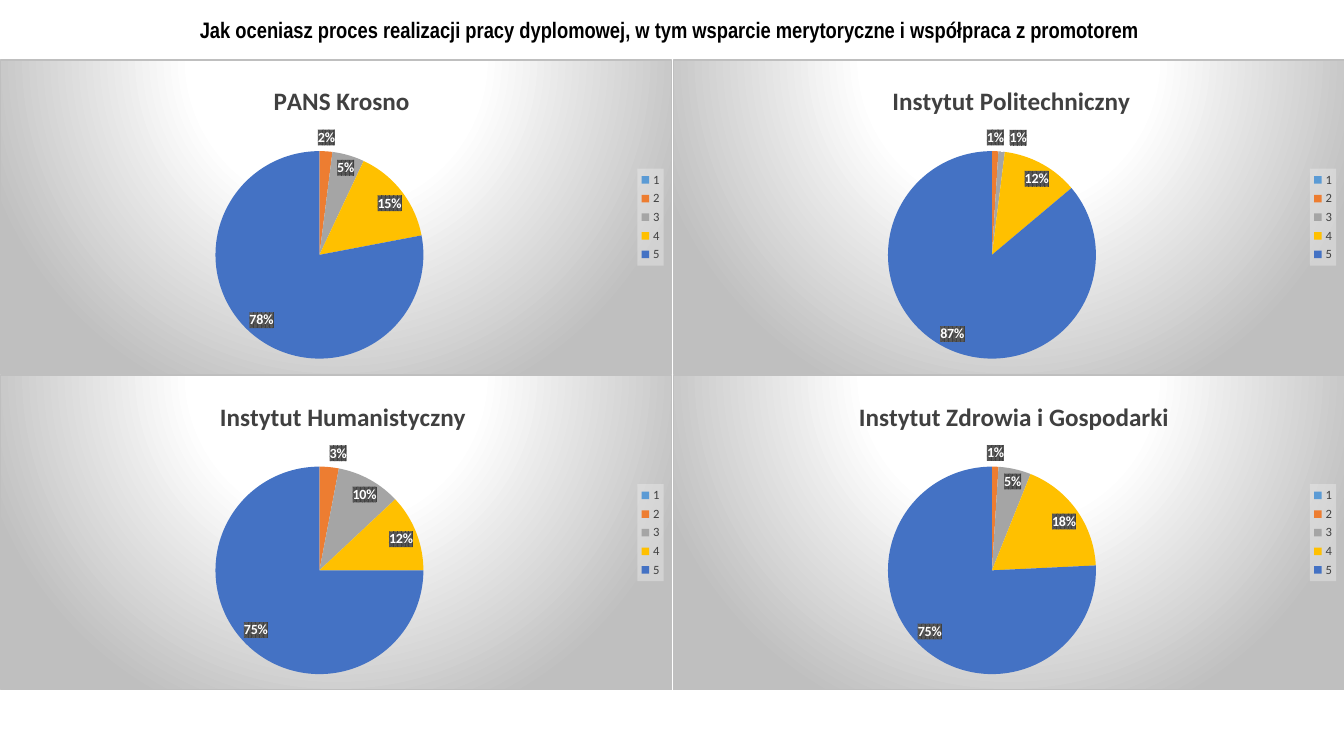
"""Build a slide of four pie charts with thesis process ratings."""
from pptx import Presentation, util as u
from pptx.chart.data import CategoryChartData
from pptx.dml.color import RGBColor
from pptx.enum import chart as c, text
from pptx.oxml import parse_xml
from pptx.oxml.ns import nsdecls, qn

NAMESPACES = nsdecls("c", "a")
SLICE_COLORS = ["5B9BD5", "ED7D31", "A5A5A5", "FFC000", "4472C4"]
CHART_WIDTH, CHART_HEIGHT, CHARTS_TOP = 6.67, 3.13, 0.59
RATINGS = [
    ("PANS Krosno", 0.4, [0, 2, 5, 15, 78], True),
    ("Instytut Politechniczny", 0.32, [0, 1, 1, 12, 87], False),
    ("Instytut Humanistyczny", 0.32, [0, 3, 10, 12, 75], False),
    ("Instytut Zdrowia i Gospodarki", 0.27, [0, 1, 5, 18, 75], True),
]
CHART_FILL = (
    '<a:gradFill><a:gsLst><a:gs pos="0"><a:srgbClr val="FFFFFF"/></a:gs>'
    '<a:gs pos="39000"><a:srgbClr val="FFFFFF"/></a:gs>'
    '<a:gs pos="100000"><a:srgbClr val="BFBFBF"/></a:gs></a:gsLst>'
    '<a:path path="circle"><a:fillToRect l="50000" t="-80000" r="50000" b="180000"/>'
    '</a:path></a:gradFill><a:ln w="9525"><a:solidFill><a:srgbClr val="BFBFBF"/>'
    '</a:solidFill></a:ln>'
)
LABEL_FILL = (
    '<a:pattFill prst="pct75"><a:fgClr><a:srgbClr val="404040"/></a:fgClr>'
    '<a:bgClr><a:srgbClr val="595959"/></a:bgClr></a:pattFill>'
)
LEGEND_FILL = (
    '<a:solidFill><a:srgbClr val="F2F2F2"><a:alpha val="39000"/></a:srgbClr></a:solidFill>'
)


def write(target, content=None, size=10, color="000000", bold=False, name="Calibri"):
    if content:
        target.text = content
    target.font.size = u.Pt(size)
    target.font.color.rgb = RGBColor.from_string(color)
    target.font.bold = bold
    target.font.name = name


def set_layout(element, index, **values):
    for layout in element.findall(qn("c:layout")):
        element.remove(layout)
    entries = "".join(f'<c:{key} val="{value}"/>' for key, value in values.items())
    element.insert(index, parse_xml(
        f'<c:layout {NAMESPACES}><c:manualLayout>{entries}</c:manualLayout></c:layout>'))


presentation = Presentation()
presentation.slide_width = u.Inches(13.33)
presentation.slide_height = u.Inches(7.5)
slide = presentation.slides.add_slide(presentation.slide_layouts[6])

heading = slide.shapes.add_textbox(0, 0, u.Inches(13.33), u.Inches(0.59)).text_frame
heading.word_wrap = True
heading.vertical_anchor = text.MSO_ANCHOR.MIDDLE
heading.paragraphs[0].alignment = text.PP_ALIGN.CENTER
write(heading.paragraphs[0],
      "Jak oceniasz proces realizacji pracy dyplomowej, w tym wsparcie "
      "merytoryczne i współpraca z promotorem ",
      size=16, bold=True, name="Arial Narrow")

for number, (name, title_left, shares, zero_shown) in enumerate(RATINGS):
    row, column = divmod(number, 2)
    data = CategoryChartData()
    data.categories = ["1", "2", "3", "4", "5"]
    data.add_series("Series 1", shares)
    chart = slide.shapes.add_chart(
        c.XL_CHART_TYPE.PIE,
        u.Inches(column * CHART_WIDTH), u.Inches(CHARTS_TOP + row * CHART_HEIGHT),
        u.Inches(CHART_WIDTH), u.Inches(CHART_HEIGHT), data).chart
    write(chart)

    chart.has_title = True
    title = chart.chart_title
    write(title.text_frame.paragraphs[0], name, size=18, color="404040", bold=True)
    title.include_in_layout = False
    set_layout(title._element, 1, xMode="edge", yMode="edge", x=title_left, y=0.06)

    chart.has_legend = True
    legend = chart.legend
    legend.position = c.XL_LEGEND_POSITION.RIGHT
    legend.include_in_layout = False
    write(legend, size=9, color="404040")

    plot = chart.plots[0]
    plot.vary_by_categories = True
    series = plot.series[0]
    for index, color in enumerate(SLICE_COLORS):
        fill = series.points[index].format.fill
        fill.solid()
        fill.fore_color.rgb = RGBColor.from_string(color)

    labels = series.data_labels
    write(labels, color="FFFFFF", bold=True)
    labels.show_value = True
    labels.number_format = '0"%"'
    labels.number_format_is_linked = False
    labels.position = c.XL_LABEL_POSITION.BEST_FIT
    if not zero_shown:
        labels._element.insert(0, parse_xml(
            f'<c:dLbl {NAMESPACES}><c:idx val="0"/><c:delete val="1"/></c:dLbl>'))

    chart_space = chart._chartSpace
    for element, fill in [(chart_space, CHART_FILL), (legend._element, LEGEND_FILL),
                          (labels._element, LABEL_FILL)]:
        element.find(qn("c:txPr")).addprevious(
            parse_xml(f'<c:spPr {NAMESPACES}>{fill}</c:spPr>'))
    chart_body = chart_space.find(qn("c:chart"))
    chart_body.addprevious(parse_xml(f'<c:roundedCorners {NAMESPACES} val="0"/>'))
    set_layout(chart_body.find(qn("c:plotArea")), 0, layoutTarget="inner",
               xMode="edge", yMode="edge", x=0.32, y=0.29, w=0.31, h=0.66)

presentation.save("out.pptx")
